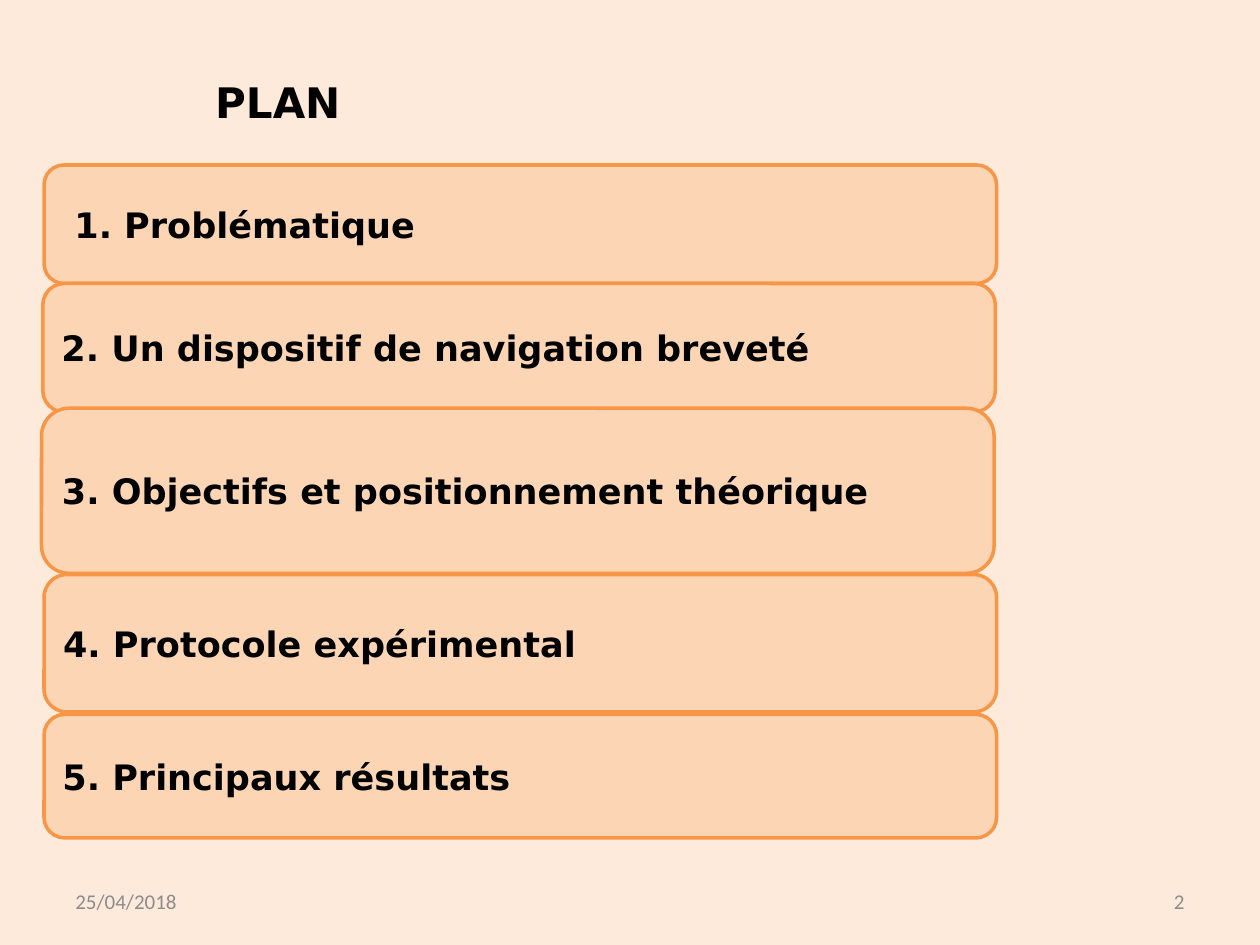
from pptx import Presentation
from pptx.dml.color import RGBColor
from pptx.enum.shapes import MSO_SHAPE
from pptx.enum.text import MSO_ANCHOR, PP_ALIGN
from pptx.util import Inches, Pt

ROUND = MSO_SHAPE.ROUNDED_RECTANGLE
MIDDLE = MSO_ANCHOR.MIDDLE
LEFT, RIGHT = PP_ALIGN.LEFT, PP_ALIGN.RIGHT

CREAM, PEACH, ORANGE = "FDEADA", "FCD5B5", "F79646"
BLACK, GREY = "000000", "8C8C8C"
HEAD, BODY = "DejaVu Sans", "Calibri"

STEPS = [
    (" 1. Problématique", 0.35, 1.31, 0.94),
    ("4. Protocole expérimental", 0.35, 4.56, 1.09),
    ("2. Un dispositif de navigation breveté", 0.34, 2.25, 1.02),
    ("3. Objectifs et positionnement théorique", 0.33, 3.24, 1.31),
    ("5. Principaux résultats", 0.35, 5.67, 0.98),
]


def paint(fill, color):
    fill.solid()
    fill.fore_color.rgb = RGBColor.from_string(color)


def write(shape, text, size, font, color, bold=False, align=LEFT):
    frame = shape.text_frame
    frame.text = text
    frame.word_wrap = True
    frame.vertical_anchor = MIDDLE
    para = frame.paragraphs[0]
    para.alignment = align
    style = para.runs[0].font
    style.size = Pt(size)
    style.name = font
    style.bold = bold
    style.color.rgb = RGBColor.from_string(color)


def add_title(slide, text):
    box = slide.shapes.add_textbox(Inches(1.61), Inches(0.3), Inches(5.98), Inches(1.01))
    paint(box.fill, CREAM)
    write(box, text, 24, HEAD, BLACK, bold=True)


def add_step(slide, text, left, top, height):
    step = slide.shapes.add_shape(
        ROUND, Inches(left), Inches(top), Inches(7.56), Inches(height))
    step.shadow.inherit = False
    paint(step.fill, PEACH)
    paint(step.line.fill, ORANGE)
    step.line.width = Pt(2)
    write(step, text, 20, HEAD, BLACK, bold=True)


def add_footer(slide, text, left, align):
    box = slide.shapes.add_textbox(Inches(left), Inches(6.95), Inches(2.33), Inches(0.4))
    write(box, text, 12, BODY, GREY, align=align)


def main():
    deck = Presentation()
    deck.slide_width, deck.slide_height = Inches(10), Inches(7.5)
    slide = deck.slides.add_slide(deck.slide_layouts[6])
    paint(slide.background.fill, CREAM)
    add_title(slide, "PLAN")
    add_footer(slide, "2", 7.17, RIGHT)
    for step in STEPS:
        add_step(slide, *step)
    add_footer(slide, "25/04/2018", 0.5, LEFT)
    deck.save("out.pptx")


if __name__ == "__main__":
    main()
